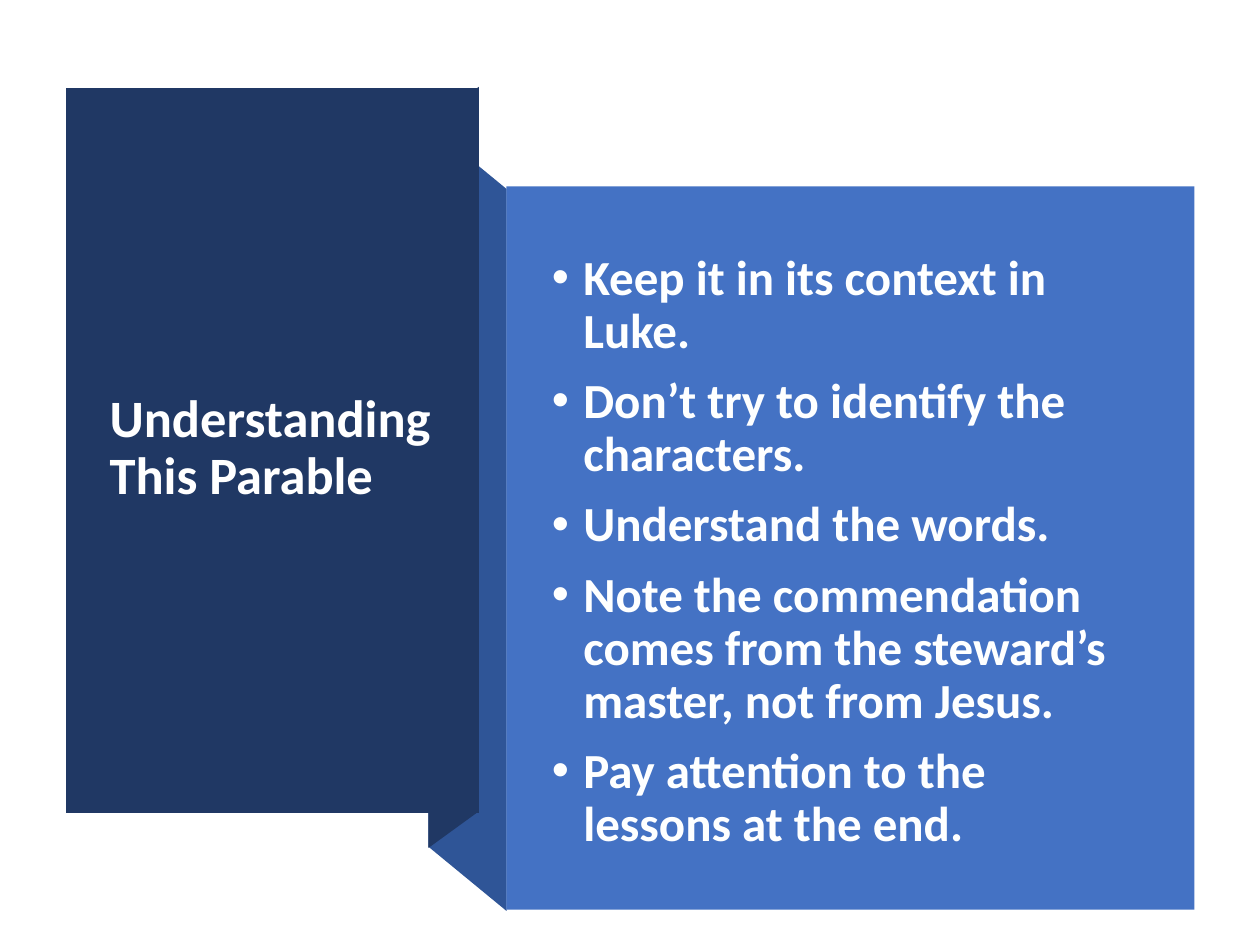
from lxml import etree
from pptx import Presentation
from pptx import util as u
from pptx.dml.color import RGBColor
from pptx.enum import shapes, text
from pptx.oxml.ns import qn

WIDTH, HEIGHT = 10, 7.5
FONT = "Calibri"
NAVY, FOLD, BLUE = "203864", "2F5597", "4472C4"
TITLE = "Understanding This Parable"
POINTS = [
    "Keep it in its context in Luke.",
    "Don’t try to identify the characters.",
    "Understand the words.",
    "Note the commendation comes from the steward’s master, not from Jesus.",
    "Pay attention to the lessons at the end.",
]


def colour(value):
    return RGBColor.from_string(value)


def paint(shape, fill):
    shape.fill.solid()
    shape.fill.fore_color.rgb = colour(fill)
    shape.line.fill.background()
    shape.shadow.inherit = False


def add_outline(page, points, fill):
    # The builder rounds points to whole units, so give them in EMU
    corners = [(u.Inches(x), u.Inches(y)) for x, y in points]
    pen = page.shapes.build_freeform(*corners[0])
    pen.add_line_segments(corners[1:], close=True)
    paint(pen.convert_to_shape(), fill)


def add_fold(page, left, right, left_top, right_top, drop, fill):
    """Slanted side of the ribbon, with equal upright edges."""
    add_outline(page, [(right, right_top + drop), (left, left_top + drop),
                       (left, left_top), (right, right_top)], fill)


def place_text(holder, box, lines, size, ink):
    """Move a placeholder to the front, into its box, and fill it."""
    holder.element.getparent().append(holder.element)
    holder.left, holder.top, holder.width, holder.height = map(u.Inches, box)
    frame = holder.text_frame
    frame.word_wrap = True
    frame.auto_size = text.MSO_AUTO_SIZE.NONE
    frame.vertical_anchor = text.MSO_ANCHOR.MIDDLE
    for index, line in enumerate(lines):
        para = frame.add_paragraph() if index else frame.paragraphs[0]
        para.alignment = text.PP_ALIGN.LEFT
        para.line_spacing = 0.9
        para.space_before = u.Pt(10 if index else 0)
        span = para.add_run()
        span.text = line
        span.font.name, span.font.size, span.font.bold = FONT, u.Pt(size), True
        span.font.color.rgb = colour(ink)


def add_bullets(frame):
    for para in frame.paragraphs:
        props = para._p.get_or_add_pPr()
        props.set("marL", str(u.Inches(0.25)))
        props.set("indent", str(-u.Inches(0.25)))
        etree.SubElement(props, qn("a:buFont")).set("typeface", "Arial")
        etree.SubElement(props, qn("a:buChar")).set("char", "•")


def title_panel(page, left, top, width, height):
    right, bottom = left + width, top + height
    add_outline(page, [(left, top), (right, top), (right, bottom), (left, bottom)], NAVY)
    place_text(page.shapes.title, (left + 0.25, top + 0.37, width - 0.5, height - 0.76),
               [TITLE], 30, "FFFFFF")


def list_panel(page, left, top, width, height):
    panel = page.shapes.add_shape(shapes.MSO_SHAPE.RECTANGLE,
                                  *map(u.Inches, (left, top, width, height)))
    paint(panel, BLUE)
    body = page.placeholders[1]
    place_text(body, (left + 0.26, top + 0.29, width - 0.58, height - 0.51),
               POINTS, 28, "FEFFFF")
    add_bullets(body.text_frame)


def main():
    deck = Presentation()
    deck.slide_width, deck.slide_height = u.Inches(WIDTH), u.Inches(HEIGHT)
    page = deck.slides.add_slide(deck.slide_layouts[1])

    # Ribbon folds behind the panels
    add_fold(page, 3.4, 4.02, 0.99, 1.5, 5.73, FOLD)
    add_fold(page, 3.4, 3.8, 0.98, 0.69, 5.75, NAVY)

    # Panels with their text
    title_panel(page, 0.52, 0.7, 3.28, 5.75)
    list_panel(page, 4.02, 1.48, 5.46, 5.74)
    deck.save("out.pptx")


if __name__ == "__main__":
    main()
